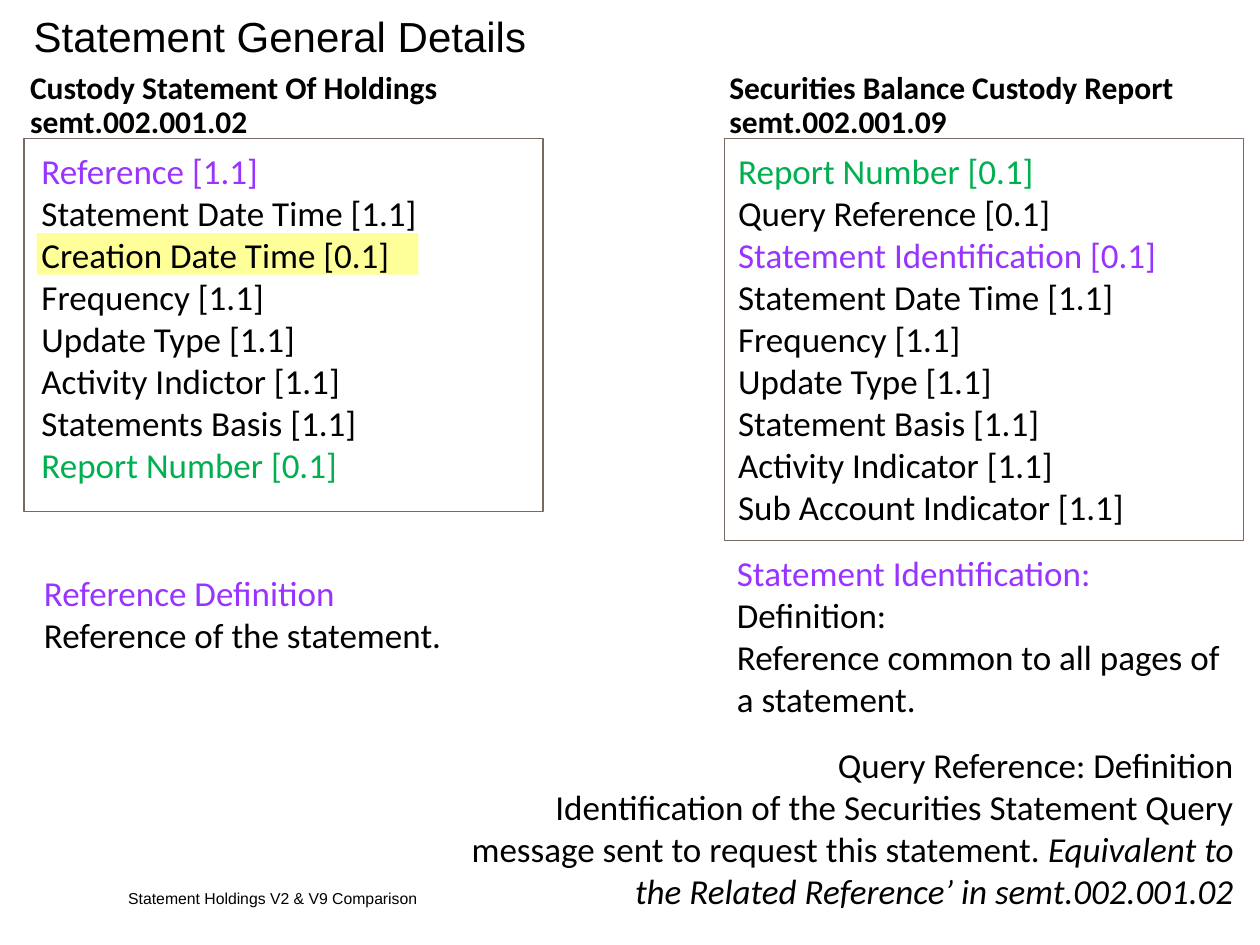
from pptx import Presentation
from pptx.dml.color import RGBColor
from pptx.enum.shapes import MSO_SHAPE as SHAPE
from pptx.enum.text import MSO_ANCHOR as ANCHOR, PP_ALIGN as ALIGN
from pptx.util import Pt

BLACK, PURPLE, GREEN = "000000", "9933FF", "00B050"
BORDER, YELLOW, WHITE = "766A62", "FFFF99", "FFFFFF"

# A paragraph is a list of (text, colour, italic) runs.
TITLE = [[("Statement General Details", BLACK, False)]]
FOOTER = [[("Statement Holdings V2 & V9 Comparison", BLACK, False)]]

# Each column: heading, heading box, frame, field list box, fields
COLUMNS = [
    (["Custody Statement Of Holdings", "semt.002.001.02"],
     (10.1, 38.2, 249, 45.4), (13.7, 79.2, 296.6, 213.1), (16.6, 82, 231, 201),
     [("Reference [1.1]", PURPLE),
      ("Statement Date Time [1.1]", BLACK),
      ("Creation Date Time [0.1]", BLACK),
      ("Frequency [1.1]", BLACK),
      ("Update Type [1.1]", BLACK),
      ("Activity Indictor [1.1]", BLACK),
      ("Statements Basis [1.1]", BLACK),
      ("Report Number [0.1]", GREEN)]),
    (["Securities Balance Custody Report", "semt.002.001.09"],
     (409.7, 38.2, 271, 45.4), (414, 79.2, 296.6, 229.7), (414.7, 82, 256, 250),
     [("Report Number [0.1]", GREEN),
      ("Query Reference [0.1]", BLACK),
      ("Statement Identification [0.1]", PURPLE),
      ("Statement Date Time [1.1]", BLACK),
      ("Frequency [1.1]", BLACK),
      ("Update Type [1.1]", BLACK),
      ("Statement Basis [1.1]", BLACK),
      ("Activity Indicator [1.1]", BLACK),
      ("Sub Account Indicator [1.1]", BLACK)]),
]
HIGHLIGHT = (20.9, 133.2, 218.2, 23.8)

REFERENCE = [
    [("Reference Definition", PURPLE, False)],
    [("Reference of the statement.", BLACK, False)],
]
IDENTIFICATION = [
    [("Statement Identification: ", PURPLE, False), ("Definition:", BLACK, False)],
    [("Reference common to all pages of a statement.", BLACK, False)],
]
QUERY = [
    [("Query Reference: Definition", BLACK, False)],
    [("Identification of the Securities Statement Query message sent to "
      "request this statement. ", BLACK, False),
     ("Equivalent to the Related Reference’ in semt.002.001.02", BLACK, True)],
]


def rgb(value):
    return RGBColor.from_string(value)


def add_rect(box, fill=None, line=None):
    sp = s.shapes.add_shape(SHAPE.RECTANGLE, *map(Pt, box))
    sp.shadow.inherit = False
    if fill:
        sp.fill.solid()
        sp.fill.fore_color.rgb = rgb(fill)
    else:
        sp.fill.background()
    if line:
        sp.line.color.rgb = rgb(line)
        sp.line.width = Pt(0.75)
    else:
        sp.line.fill.background()
    return sp


def write(sp, paragraphs, size=20, font="Calibri", bold=False, spacing=None,
          align=ALIGN.LEFT, anchor=ANCHOR.TOP):
    tf = sp.text_frame
    tf.word_wrap = True
    tf.vertical_anchor = anchor
    for i, runs in enumerate(paragraphs):
        p = tf.add_paragraph() if i else tf.paragraphs[0]
        p.alignment = align
        if spacing:
            p.line_spacing = Pt(spacing)
        p.font.size, p.font.name, p.font.bold = Pt(size), font, bold
        for text, color, italic in runs:
            r = p.add_run()
            r.text = text
            r.font.color.rgb = rgb(color)
            if italic:
                r.font.italic = True


def add_text(box, paragraphs, **style):
    write(s.shapes.add_textbox(*map(Pt, box)), paragraphs, **style)


prs = Presentation()
prs.slide_width, prs.slide_height = Pt(720), Pt(540)
s = prs.slides.add_slide(prs.slide_layouts[6])

add_text((12.2, 0, 700.6, 40.3), TITLE, size=24, font="Arial", anchor=ANCHOR.MIDDLE)
add_text((66.2, 504, 447.1, 18), FOOTER, size=9, font="Arial", anchor=ANCHOR.MIDDLE)

add_rect(HIGHLIGHT, fill=YELLOW)
for heading, heading_box, frame, list_box, fields in COLUMNS:
    add_rect(frame, line=BORDER)
    add_text(list_box, [[(text, color, False)] for text, color in fields])
    add_text(heading_box, [[(text, BLACK, False)] for text in heading],
             size=18, bold=True, spacing=19)

add_text((414, 311.8, 298.8, 104.4), IDENTIFICATION)
add_text((18, 322.9, 244, 55.4), REFERENCE)
write(add_rect((262.1, 421.2, 450, 104.4), fill=WHITE), QUERY, align=ALIGN.RIGHT)

prs.save("out.pptx")
